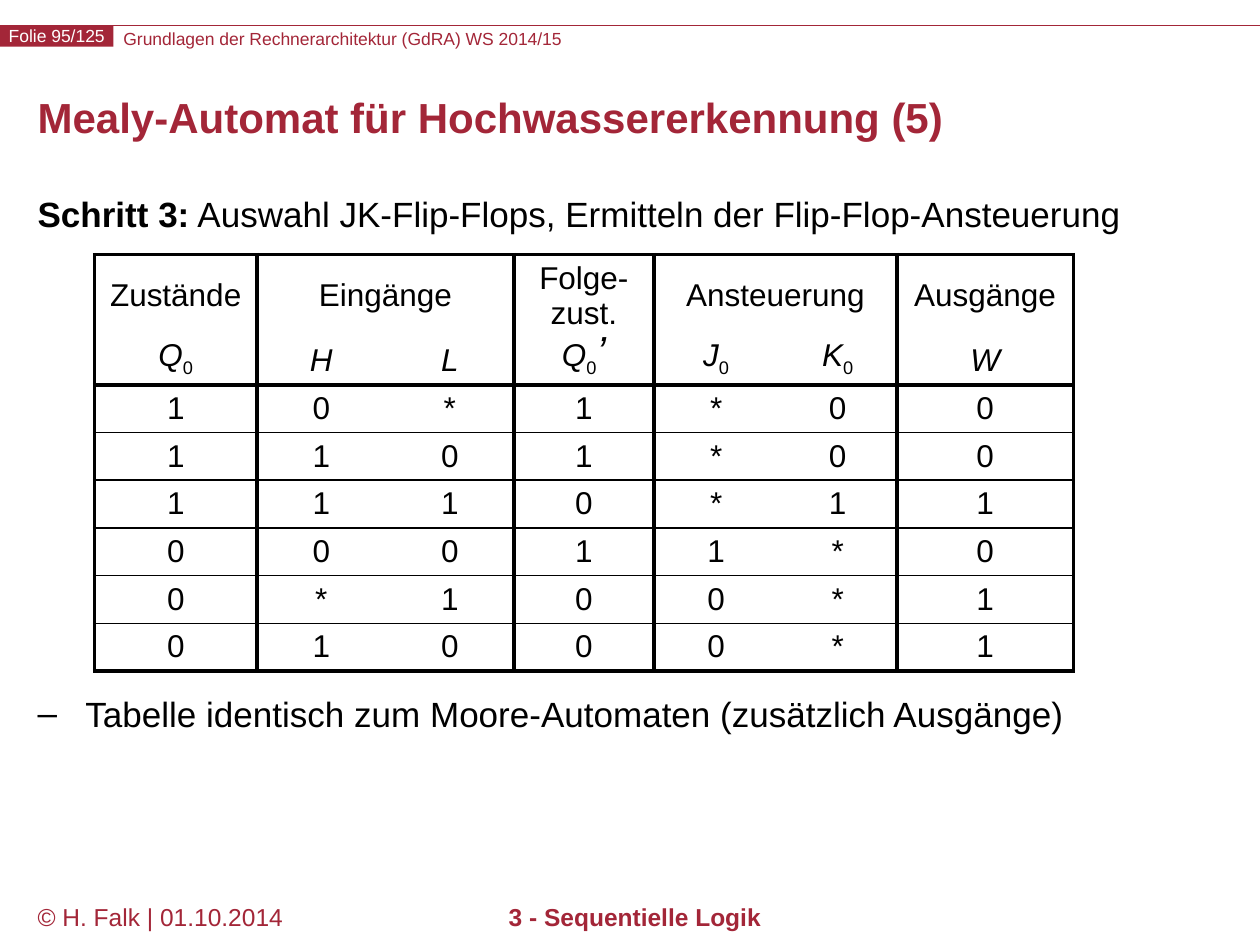
from lxml import etree
from pptx import Presentation
from pptx.dml.color import RGBColor
from pptx.enum import shapes, text
from pptx.oxml.ns import qn
from pptx.util import Inches, Pt

RED, BLACK, WHITE = "A32638", "000000", "FFFFFF"
MID = text.MSO_ANCHOR.MIDDLE
CENTER = text.PP_ALIGN.CENTER

COLS = [1.29, 1.02, 1.02, 1.11, 0.99, 0.94, 1.4]
ROWS = [0.65] + [0.37] * 7
GROUPS = {0: "Zustände", 1: "Eingänge", 3: "Folge-zust.", 4: "Ansteuerung", 6: "Ausgänge"}
PAIRS = (1, 4)
VARS = ["Q0", "H", "L", "Q0’", "J0", "K0", "W"]
DATA = ["10*1*00", "1101*00", "1110*11", "00011*0", "0*100*1", "01000*1"]


def color(code):
    return RGBColor.from_string(code)


def add_run(para, words, size, code, bold=False, italic=False, base=None):
    run = para.add_run()
    run.text = words
    font = run.font
    font.name, font.size, font.bold, font.italic = "Arial", Pt(size), bold, italic
    font.color.rgb = color(code)
    if base:
        run._r.get_or_add_rPr().set("baseline", str(base))


def add_text(slide, box, runs, size, code, align=None, anchor=None, pad=True, space=None):
    """Place one paragraph; runs are (words, bold) pairs."""
    frame = slide.shapes.add_textbox(*map(Inches, box)).text_frame
    frame.word_wrap = True
    frame.vertical_anchor = anchor
    if not pad:
        frame.margin_left = frame.margin_right = frame.margin_top = frame.margin_bottom = 0
    para = frame.paragraphs[0]
    para.alignment, para.line_spacing = align, space
    for words, bold in runs:
        add_run(para, words, size, code, bold)
    return para


def add_header(slide, box):
    left, top, width, height = box
    rule = slide.shapes.add_connector(shapes.MSO_CONNECTOR.STRAIGHT, Inches(left),
                                      Inches(top), Inches(left + width), Inches(top))
    rule.line.color.rgb, rule.line.width = color(RED), Pt(0.75)
    etree.SubElement(rule._element.spPr, qn("a:effectLst"))
    add_text(slide, (left + 0.98, top + 0.02, 6.6, height),
             [("Grundlagen der Rechnerarchitektur (GdRA) WS 2014/15", False)], 10, RED, pad=False)

    # Page badge
    badge = slide.shapes.add_shape(shapes.MSO_SHAPE.RECTANGLE, Inches(left), Inches(top),
                                   Inches(0.9), Inches(height))
    badge.shadow.inherit = False
    badge.fill.solid()
    badge.fill.fore_color.rgb = color(RED)
    badge.line.fill.background()
    frame = badge.text_frame
    frame.margin_left = frame.margin_right = frame.margin_top = frame.margin_bottom = 0
    frame.word_wrap, frame.vertical_anchor = False, MID
    frame.paragraphs[0].alignment = CENTER
    add_run(frame.paragraphs[0], "Folie 95/125", 10, WHITE)


def add_footer(slide, box):
    left, top, width, height = box
    add_text(slide, (left, top, 2.2, height), [("© H. Falk | 01.10.2014", False)], 14, RED)
    add_text(slide, (left + 1.81, top, width, height), [("3 - Sequentielle Logik", True)],
             14, RED, CENTER)


def add_bullet(slide, box, words):
    para = add_text(slide, box, [], 20, BLACK)
    props = para._p.get_or_add_pPr()
    props.set("marL", str(Inches(0.38)))
    props.set("indent", str(-Inches(0.38)))
    etree.SubElement(props, qn("a:buFont"), typeface="Arial")
    etree.SubElement(props, qn("a:buChar"), char="–")
    add_run(para, words, 20, BLACK)


def set_edges(cell, widths):
    """Draw left, right, top and bottom edges; width 0 hides an edge."""
    props = cell._tc.get_or_add_tcPr()
    for side, width in zip("LRTB", widths):
        edge = etree.SubElement(props, qn("a:ln" + side), w=str(Pt(width)))
        if width:
            fill = etree.SubElement(edge, qn("a:solidFill"))
            etree.SubElement(fill, qn("a:srgbClr"), val=BLACK)
        else:
            etree.SubElement(edge, qn("a:noFill"))
    cell.fill.background()


def fill_cell(cell, row, col):
    para = cell.text_frame.paragraphs[0]
    para.alignment, para.line_spacing = CENTER, Pt(20)
    if row == 0:
        cell.vertical_anchor = MID
        add_run(para, GROUPS.get(col, ""), 18, BLACK)
    elif row == 1:
        for sign in VARS[col]:
            sub = sign == "0"
            add_run(para, sign, 24 if sign == "’" else 18, BLACK,
                    italic=not sub, base=-25000 if sub else None)
    else:
        add_run(para, DATA[row - 2][col], 18, BLACK)


def add_grid(slide, box):
    table = slide.shapes.add_table(len(ROWS), len(COLS), *map(Inches, box)).table
    table.first_row = table.horz_banding = False
    for col, width in enumerate(COLS):
        table.columns[col].width = Inches(width)
    for row, height in enumerate(ROWS):
        table.rows[row].height = Inches(height)
    for col in PAIRS:
        table.cell(0, col).merge(table.cell(0, col + 1))

    # Edge widths: column pairs stay open inside, as do the two header rows
    across = [0 if col - 1 in PAIRS else 2.25 for col in range(len(COLS) + 1)]
    down = [2.25, 0, 2.25] + [1] * (len(DATA) - 1) + [2.25]
    for row in range(len(ROWS)):
        for col in range(len(COLS)):
            cell = table.cell(row, col)
            set_edges(cell, across[col:col + 2] + down[row:row + 2])
            if not cell.is_spanned:
                fill_cell(cell, row, col)


def main():
    deck = Presentation()
    deck.slide_width, deck.slide_height = Inches(10), Inches(7.5)
    slide = deck.slides.add_slide(deck.slide_layouts[6])
    add_header(slide, (0, 0.2, 10, 0.17))
    add_footer(slide, (0.2, 7.11, 6.06, 0.39))
    # Title and step
    add_text(slide, (0.2, 0.6, 9.61, 0.72), [("Mealy-Automat für Hochwassererkennung (5)", True)],
             24, RED, anchor=MID, space=Pt(24))
    add_text(slide, (0.2, 1.52, 9.61, 0.42),
             [("Schritt 3:", True),
              (" Auswahl JK-Flip-Flops, Ermitteln der Flip-Flop-Ansteuerung", False)],
             20, BLACK, space=0.9)
    # Table and remark
    add_grid(slide, (0.75, 2.02, sum(COLS), sum(ROWS)))
    add_bullet(slide, (0.2, 5.45, 9.61, 0.42),
               "Tabelle identisch zum Moore-Automaten (zusätzlich Ausgänge)")
    deck.save("out.pptx")


if __name__ == "__main__":
    main()
